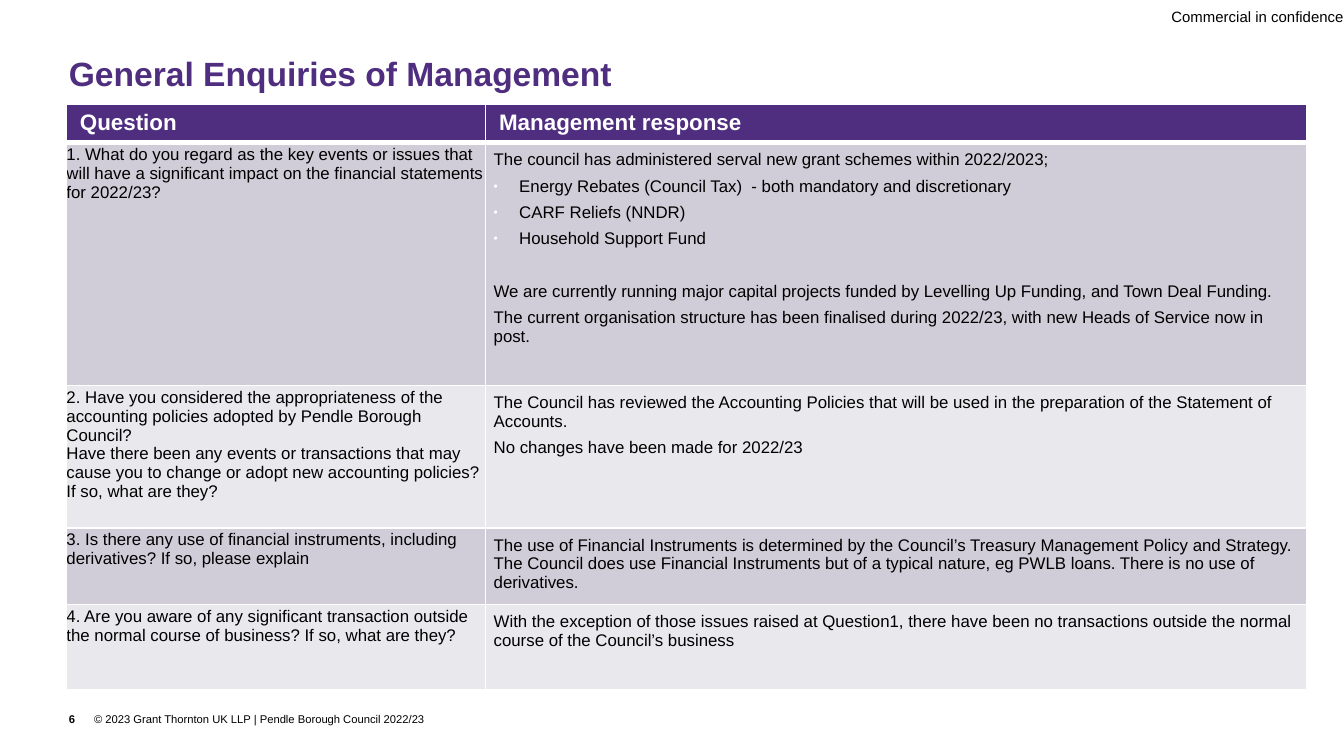
from dataclasses import dataclass

from lxml import etree
from pptx import Presentation
from pptx import util as u
from pptx.dml.color import RGBColor
from pptx.enum import text
from pptx.oxml import ns

PURPLE, WHITE, BLACK = "4F2D7F", "FFFFFF", "000000"
BANDS = ("D0CDD8", "E9E8EC")
COLUMN_WIDTHS = (224.6, 440)
HEADER_HEIGHT = 20.5
INDENT = 13.7


@dataclass(frozen=True)
class Label:
    wording: str
    left: float
    top: float
    width: float
    height: float
    size: float
    color: str = BLACK
    bold: bool = False
    align: text.PP_ALIGN = text.PP_ALIGN.LEFT
    anchor: text.MSO_ANCHOR = text.MSO_ANCHOR.TOP
    line_spacing: float = 1.0


@dataclass(frozen=True)
class Answer:
    wording: str
    bullet: bool = False
    space_before: float = 4


@dataclass(frozen=True)
class Enquiry:
    height: float
    question: str
    answers: tuple[Answer, ...]


LABELS = (
    Label("Commercial in confidence", 607.7, 0, 112.3, 17.3, 8,
          align=text.PP_ALIGN.RIGHT, anchor=text.MSO_ANCHOR.MIDDLE),
    Label("General Enquiries of Management", 36.9, 31, 646.6, 62.6, 18, PURPLE, True,
          line_spacing=0.9),
    Label("6", 36.9, 381.6, 13, 7.2, 6, bold=True),
    Label("© 2023 Grant Thornton UK LLP | Pendle Borough Council 2022/23",
          50.4, 381.6, 310.3, 7.2, 6),
)

ENQUIRIES = (
    Enquiry(
        130.2,
        "1. What do you regard as the key events or issues that will have a significant "
        "impact on the financial statements for 2022/23?",
        (
            Answer("The council has administered serval new grant schemes within 2022/2023;"),
            Answer("Energy Rebates (Council Tax)  - both mandatory and discretionary", True),
            Answer("CARF Reliefs (NNDR)", True),
            Answer("Household Support Fund", True),
            Answer("We are currently running major capital projects funded by Levelling Up "
                   "Funding, and Town Deal Funding.", space_before=18),
            Answer("The current organisation structure has been finalised during 2022/23, "
                   "with new Heads of Service now in post."),
        ),
    ),
    Enquiry(
        76.2,
        "2. Have you considered the appropriateness of the accounting policies adopted by "
        "Pendle Borough Council?\n"
        "Have there been any events or transactions that may cause you to change or adopt "
        "new accounting policies? If so, what are they?",
        (
            Answer("The Council has reviewed the Accounting Policies that will be used in "
                   "the preparation of the Statement of Accounts."),
            Answer("No changes have been made for 2022/23"),
        ),
    ),
    Enquiry(
        39.9,
        "3. Is there any use of financial instruments, including derivatives? "
        "If so, please explain",
        (
            Answer("The use of Financial Instruments is determined by the Council’s Treasury "
                   "Management Policy and Strategy. The Council does use Financial Instruments "
                   "but of a typical nature, eg PWLB loans. There is no use of derivatives."),
        ),
    ),
    Enquiry(
        45.6,
        "4. Are you aware of any significant transaction outside the normal course of "
        "business? If so, what are they?",
        (
            Answer("With the exception of those issues raised at Question1, there have been no "
                   "transactions outside the normal course of the Council’s business"),
        ),
    ),
)


def rgb(color: str) -> RGBColor:
    return RGBColor.from_string(color)


def format_runs(frame, size: float, color: str, bold: bool = False) -> None:
    for paragraph in frame.paragraphs:
        for run in paragraph.runs:
            run.font.name = "Arial"
            run.font.size = u.Pt(size)
            run.font.bold = bold
            run.font.color.rgb = rgb(color)


def add_label(slide, label: Label) -> None:
    box = slide.shapes.add_textbox(
        *(u.Pt(v) for v in (label.left, label.top, label.width, label.height)))
    frame = box.text_frame
    frame.margin_left = frame.margin_right = frame.margin_top = frame.margin_bottom = 0
    frame.word_wrap = True
    frame.vertical_anchor = label.anchor
    frame.text = label.wording
    frame.paragraphs[0].alignment = label.align
    frame.paragraphs[0].line_spacing = label.line_spacing
    format_runs(frame, label.size, label.color, label.bold)


def add_bullet(paragraph) -> None:
    properties = paragraph._p.get_or_add_pPr()
    properties.set("marL", str(u.Pt(INDENT)))
    properties.set("indent", str(-u.Pt(INDENT)))
    bullet_color = etree.SubElement(properties, ns.qn("a:buClr"))
    etree.SubElement(bullet_color, ns.qn("a:srgbClr"), val=WHITE)
    etree.SubElement(properties, ns.qn("a:buSzPct"), val="70000")
    etree.SubElement(properties, ns.qn("a:buFont"), typeface="Arial")
    etree.SubElement(properties, ns.qn("a:buChar"), char="•")


def style_cell(cell, fill: str, side: float, edge: float,
               top_line: float = 1, bottom_line: float = 1) -> None:
    cell.margin_left = cell.margin_right = u.Pt(side)
    cell.margin_top = cell.margin_bottom = u.Pt(edge)
    cell.fill.solid()
    cell.fill.fore_color.rgb = rgb(fill)
    # Borders come before the fill in the cell properties
    properties = cell._tc.get_or_add_tcPr()
    widths = {"lnL": 1, "lnR": 1, "lnT": top_line, "lnB": bottom_line}
    for position, (border, width) in enumerate(widths.items()):
        line = etree.Element(ns.qn(f"a:{border}"), w=str(u.Pt(width)))
        solid = etree.SubElement(line, ns.qn("a:solidFill"))
        etree.SubElement(solid, ns.qn("a:srgbClr"), val=WHITE)
        properties.insert(position, line)


def fill_answers(frame, answers: tuple[Answer, ...]) -> None:
    frame.text = "\n".join(answer.wording for answer in answers)
    for index, (paragraph, answer) in enumerate(zip(frame.paragraphs, answers)):
        if answer.bullet:
            add_bullet(paragraph)
        if index:
            paragraph.space_before = u.Pt(answer.space_before)


def add_enquiries(slide) -> None:
    height = HEADER_HEIGHT + sum(enquiry.height for enquiry in ENQUIRIES)
    table = slide.shapes.add_table(
        len(ENQUIRIES) + 1, len(COLUMN_WIDTHS), u.Pt(35.6), u.Pt(55.6),
        u.Pt(sum(COLUMN_WIDTHS)), u.Pt(height)).table
    for column, width in zip(table.columns, COLUMN_WIDTHS):
        column.width = u.Pt(width)

    # Header row
    table.rows[0].height = u.Pt(HEADER_HEIGHT)
    for cell, heading in zip(table.rows[0].cells, ("Question", "Management response")):
        cell.text_frame.text = heading
        style_cell(cell, PURPLE, 7.2, 3.2, bottom_line=3)
        format_runs(cell.text_frame, 12, WHITE, True)

    # Question and response rows
    for index, enquiry in enumerate(ENQUIRIES):
        row = table.rows[index + 1]
        row.height = u.Pt(enquiry.height)
        question, response = row.cells
        question.text_frame.text = enquiry.question
        fill_answers(response.text_frame, enquiry.answers)
        for cell, side, edge in ((question, 0, 1.4), (response, 4.3, 4.3)):
            style_cell(cell, BANDS[index % 2], side, edge, top_line=1 if index else 3)
            format_runs(cell.text_frame, 9, BLACK)


def main() -> None:
    deck = Presentation()
    deck.slide_width, deck.slide_height = u.Pt(720), u.Pt(405)
    slide = deck.slides.add_slide(deck.slide_layouts[6])
    for label in LABELS:
        add_label(slide, label)
    add_enquiries(slide)
    deck.save("out.pptx")


if __name__ == "__main__":
    main()
